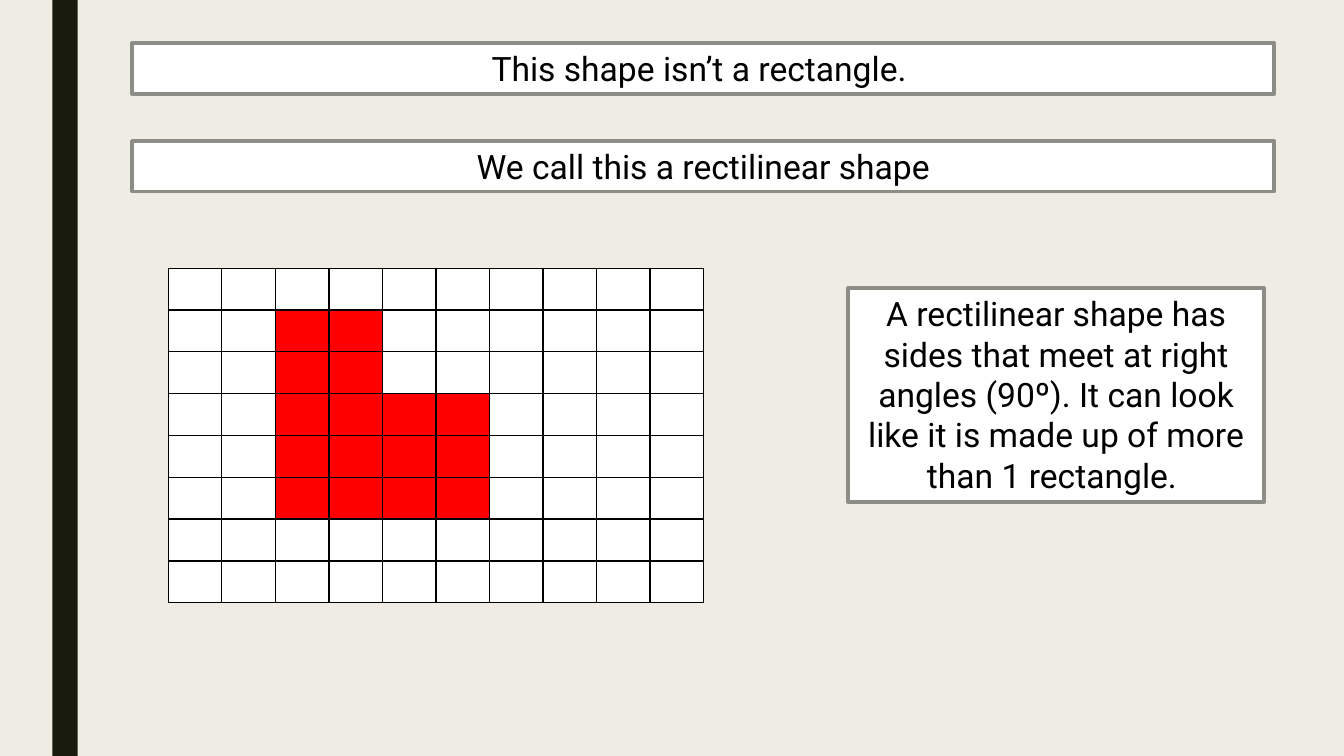
from lxml.etree import SubElement
from pptx import Presentation
from pptx.dml.color import RGBColor
from pptx.enum.shapes import MSO_SHAPE
from pptx.enum.text import MSO_ANCHOR, MSO_AUTO_SIZE, PP_ALIGN
from pptx.oxml.ns import qn
from pptx.util import Pt

PX = 9144
CREAM = RGBColor(0xEF, 0xED, 0xE3)
OLIVE = RGBColor(0x19, 0x1B, 0x0E)
GREY = RGBColor(0x8C, 0x8D, 0x86)
WHITE = RGBColor(0xFF, 0xFF, 0xFF)
BLACK = RGBColor(0x00, 0x00, 0x00)
RED = RGBColor(0xFF, 0x00, 0x00)


class Lesson:
    font = "Roboto"
    size = Pt(24)
    border = Pt(2.75)

    def __init__(self, page):
        self.page = page
        page.background.fill.solid()
        page.background.fill.fore_color.rgb = CREAM

    def rectangle(self, fill, *frame):
        box = self.page.shapes.add_shape(MSO_SHAPE.RECTANGLE, *(n * PX for n in frame))
        box.shadow.inherit = False
        box.fill.solid()
        box.fill.fore_color.rgb = fill
        box.line.fill.background()
        return box

    def caption(self, text, *frame):
        box = self.rectangle(WHITE, *frame)
        box.line.color.rgb = GREY
        box.line.width = self.border
        box.text_frame.word_wrap = True
        box.text_frame.auto_size = MSO_AUTO_SIZE.SHAPE_TO_FIT_TEXT
        box.text_frame.vertical_anchor = MSO_ANCHOR.TOP
        para = box.text_frame.paragraphs[0]
        para.alignment = PP_ALIGN.CENTER
        span = para.add_run()
        span.text = text
        span.font.name = self.font
        span.font.size = self.size
        span.font.color.rgb = BLACK

    def cell_borders(self, cell):
        properties = cell._tc.get_or_add_tcPr()
        for position, side in enumerate(("lnL", "lnR", "lnT", "lnB")):
            line = SubElement(properties, qn(f"a:{side}"), w=str(Pt(1)))
            fill = SubElement(line, qn("a:solidFill"))
            SubElement(fill, qn("a:srgbClr"), val=str(BLACK))
            properties.insert(position, line)

    def grid(self, rows, columns, shaded, *frame):
        left, top, width, height = (n * PX for n in frame)
        table = self.page.shapes.add_table(rows, columns, left, top, width, height).table
        table.first_row = False
        table.horz_banding = False
        for row in range(rows):
            for column in range(columns):
                cell = table.cell(row, column)
                cell.fill.solid()
                cell.fill.fore_color.rgb = RED if (row, column) in shaded else WHITE
                self.cell_borders(cell)


def main():
    deck = Presentation()
    deck.slide_width, deck.slide_height = 1333 * PX, 750 * PX
    lesson = Lesson(deck.slides.add_slide(deck.slide_layouts[6]))
    lesson.rectangle(OLIVE, 52, 0, 25, 750)

    tall_part = {(row, column) for row in range(1, 6) for column in (2, 3)}
    low_part = {(row, column) for row in range(3, 6) for column in (4, 5)}
    lesson.grid(8, 10, tall_part | low_part, 167, 266, 531, 332)

    lesson.caption("This shape isn’t a rectangle. ", 131, 43, 1133, 50)
    lesson.caption("We call this a rectilinear shape", 131, 140, 1133, 50)
    lesson.caption(
        "A rectilinear shape has sides that meet at right angles (90º). "
        "It can look like it is made up of more than 1 rectangle. ",
        841, 286, 413, 212,
    )
    deck.save("out.pptx")


if __name__ == "__main__":
    main()
